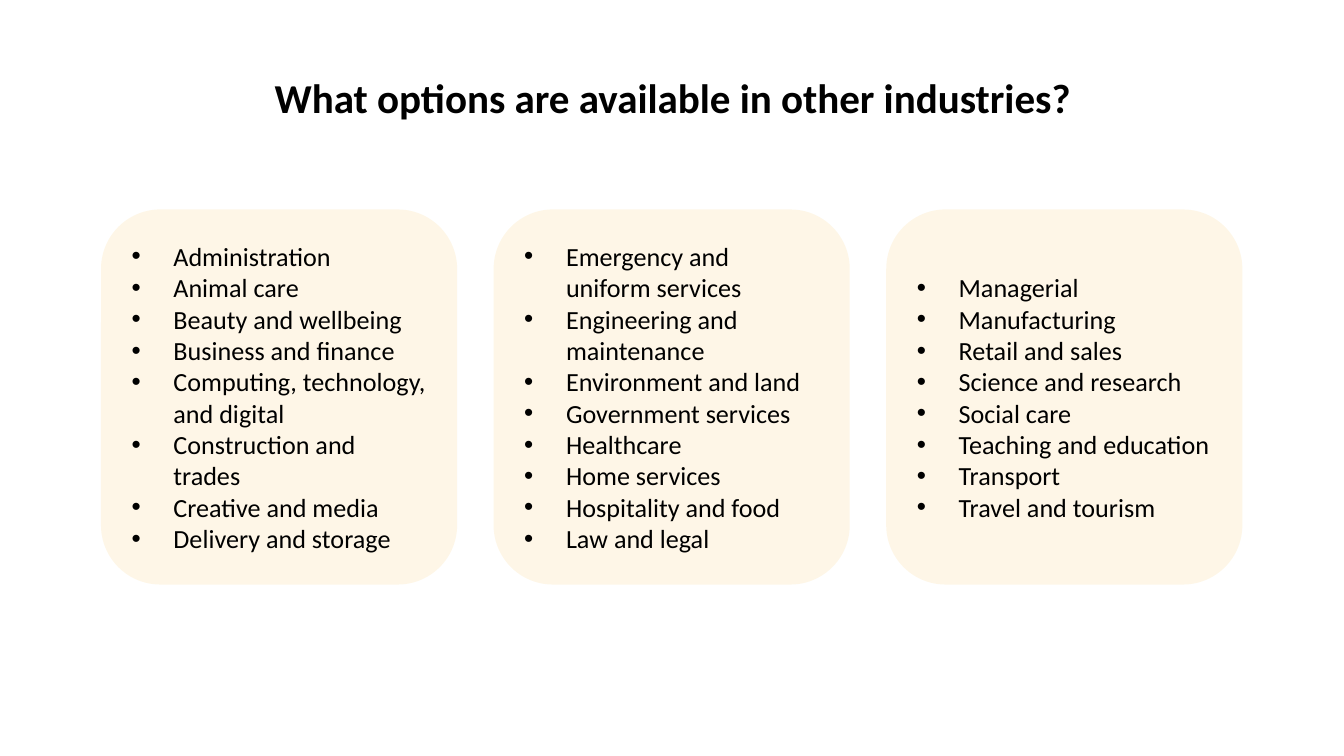
from lxml.etree import SubElement
from pptx import Presentation
from pptx.dml.color import RGBColor
from pptx.enum.shapes import MSO_SHAPE as Shape
from pptx.enum.text import MSO_ANCHOR as Anchor, MSO_AUTO_SIZE as Fit, PP_ALIGN as Align
from pptx.oxml.ns import qn
from pptx.util import Cm, Pt

BLACK = RGBColor(0x00, 0x00, 0x00)
AMBER = RGBColor(0xFB, 0xAF, 0x17)
FONT = "Calibri"
INDENT = Cm(0.79)

TITLE = "What options are available in other industries?"
LISTS = [
    ["Administration", "Animal care", "Beauty and wellbeing",
     "Business and finance", "Computing, technology, and digital",
     "Construction and trades", "Creative and media", "Delivery and storage"],
    ["Emergency and uniform services", "Engineering and maintenance",
     "Environment and land", "Government services", "Healthcare",
     "Home services", "Hospitality and food", "Law and legal"],
    ["Managerial", "Manufacturing", "Retail and sales",
     "Science and research", "Social care", "Teaching and education",
     "Transport", "Travel and tourism"],
]


def style(para, size, bold=False):
    for run in para.runs:
        font = run.font
        font.name, font.size, font.bold = FONT, Pt(size), bold
        font.color.rgb = BLACK


def add_bullet(para):
    props = para._p.get_or_add_pPr()
    props.set("marL", str(INDENT))
    props.set("indent", str(-INDENT))
    SubElement(props, qn("a:buFont"), typeface="Arial")
    SubElement(props, qn("a:buChar"), char="•")


def set_title(slide, left, top, width, height):
    title = slide.shapes.title
    title.left, title.top, title.width, title.height = left, top, width, height
    frame = title.text_frame
    frame.text = TITLE
    frame.auto_size = Fit.NONE
    frame.vertical_anchor = Anchor.MIDDLE
    para = frame.paragraphs[0]
    para.alignment = Align.CENTER
    style(para, 22, bold=True)


def add_card(slide, items, left, top, width, height):
    card = slide.shapes.add_shape(Shape.ROUNDED_RECTANGLE, left, top, width, height)
    card.shadow.inherit = False
    card.line.fill.background()
    card.fill.solid()
    card.fill.fore_color.rgb = AMBER
    tint = card._element.spPr.find(qn("a:solidFill")).find(qn("a:srgbClr"))
    SubElement(tint, qn("a:alpha"), val="10000")

    frame = card.text_frame
    frame.word_wrap = True
    frame.vertical_anchor = Anchor.MIDDLE
    frame.text = "\n".join(items)
    for para in frame.paragraphs:
        para.alignment = Align.LEFT
        add_bullet(para)
        style(para, 14)


def add_cards(slide, left, top, width, height, gap=Cm(0.69)):
    """Share the box evenly between the lists, one card each."""
    count = len(LISTS)
    wide = (width - gap * (count - 1)) // count
    for i, items in enumerate(LISTS):
        add_card(slide, items, left + i * (wide + gap), top, wide, height)


def main():
    deck = Presentation()
    deck.slide_width, deck.slide_height = Cm(25.4), Cm(14.29)
    slide = deck.slides.add_slide(deck.slide_layouts[5])
    set_title(slide, Cm(2.82), Cm(1.24), Cm(19.79), Cm(1.19))
    add_cards(slide, Cm(1.91), Cm(3.96), Cm(21.57), Cm(7.09))
    deck.save("out.pptx")


if __name__ == "__main__":
    main()
